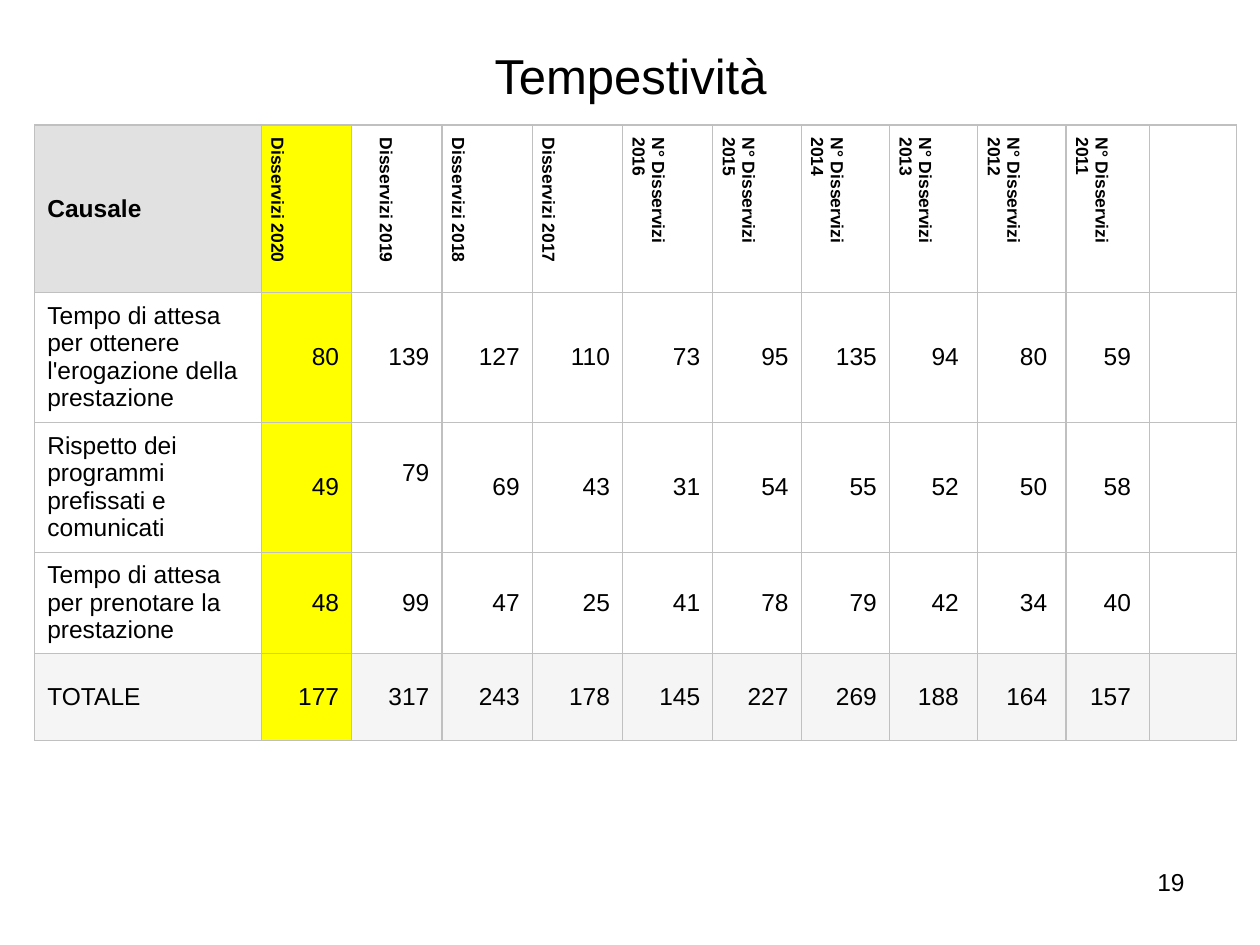
from lxml.etree import SubElement
from pptx import Presentation
from pptx.dml.color import RGBColor
from pptx.enum.text import MSO_ANCHOR, PP_ALIGN
from pptx.oxml.ns import qn
from pptx.util import Cm, Pt

HUES = {"ink": "000000", "line": "C0C0C0", "head": "E1E1E1",
        "mark": "FFFF00", "plain": "FFFFFF", "total": "F5F5F5"}
WIDTHS = [4.57] + [1.82] * 5 + [1.78] * 4 + [1.69, 1.74]
HEIGHTS = [3.37, 2.62, 2.62, 2.04, 1.75]
HEADS = ["Disservizi 2020", "Disservizi 2019", "Disservizi 2018",
         "Disservizi 2017", "N° Disservizi 2016"]
HEADS += [f"N° Disservizi\n{year}" for year in range(2015, 2010, -1)]
ROWS = [
    ("Tempo di attesa per ottenere l'erogazione della prestazione",
     [80, 139, 127, 110, 73, 95, 135, 94, 80, 59]),
    ("Rispetto dei programmi prefissati e comunicati",
     [49, 79, 69, 43, 31, 54, 55, 52, 50, 58]),
    ("Tempo di attesa per prenotare la prestazione",
     [48, 99, 47, 25, 41, 78, 79, 42, 34, 40]),
    ("TOTALE",
     [177, 317, 243, 178, 145, 227, 269, 188, 164, 157]),
]


class Deck:
    font = "Arial"

    def __init__(self):
        self.file = Presentation()
        self.file.slide_width, self.file.slide_height = Cm(25.4), Cm(19.05)
        self.slide = self.file.slides.add_slide(self.file.slide_layouts[5])

    def text(self, frame, words, size=14, bold=False, align=PP_ALIGN.LEFT):
        frame.word_wrap = True
        for i, line in enumerate(words.split("\n")):
            para = frame.add_paragraph() if i else frame.paragraphs[0]
            para.alignment = align
            run = para.add_run()
            run.text = line
            run.font.name, run.font.size, run.font.bold = self.font, Pt(size), bold
            run.font.color.rgb = RGBColor.from_string(HUES["ink"])

    def title(self, words, *box):
        shape = self.slide.shapes.title
        shape.left, shape.top, shape.width, shape.height = map(Cm, box)
        shape.text_frame.vertical_anchor = MSO_ANCHOR.MIDDLE
        self.text(shape.text_frame, words, 28, align=PP_ALIGN.CENTER)

    def label(self, words, *box):
        shape = self.slide.shapes.add_textbox(*map(Cm, box))
        self.text(shape.text_frame, words, align=PP_ALIGN.RIGHT)

    def table(self, left, top):
        frame = self.slide.shapes.add_table(
            len(HEIGHTS), len(WIDTHS), Cm(left), Cm(top),
            Cm(sum(WIDTHS)), Cm(sum(HEIGHTS)))
        grid = frame.table
        grid.first_row = grid.horz_banding = False
        for col, width in zip(grid.columns, WIDTHS):
            col.width = Cm(width)
        for row, height in zip(grid.rows, HEIGHTS):
            row.height = Cm(height)
        return grid

    def cell(self, cell, fill, words="", **style):
        props = cell._tc.get_or_add_tcPr()
        for side in ("a:lnL", "a:lnR", "a:lnT", "a:lnB"):
            line = SubElement(props, qn(side), w=str(Pt(0.75)))
            paint = SubElement(line, qn("a:solidFill"))
            SubElement(paint, qn("a:srgbClr"), val=HUES["line"])
        cell.fill.solid()
        cell.fill.fore_color.rgb = RGBColor.from_string(HUES[fill])
        cell.vertical_anchor = MSO_ANCHOR.MIDDLE
        if words:
            self.text(cell.text_frame, words, **style)

    def turn(self, cell):
        cell._tc.get_or_add_tcPr().set("vert", "vert")


def main():
    deck = Deck()
    deck.title("Tempestività", 1.7, 0.74, 22.02, 1.55)
    grid = deck.table(0.7, 2.52)

    deck.cell(grid.cell(0, 0), "head", "Causale", bold=True)
    for c, words in enumerate(HEADS, 1):
        head = grid.cell(0, c)
        deck.cell(head, "mark" if c == 1 else "plain", words, size=10, bold=True)
        deck.turn(head)
        if c == 1 or c > 7:
            head.vertical_anchor = MSO_ANCHOR.TOP
    grid.cell(0, 2).margin_bottom = Cm(0.49)
    for c in (3, 4):
        grid.cell(0, c).margin_top = Cm(0.49)

    for r, (name, values) in enumerate(ROWS, 1):
        tone = "total" if name == "TOTALE" else "plain"
        deck.cell(grid.cell(r, 0), tone, name)
        for c, value in enumerate(values, 1):
            box = grid.cell(r, c)
            deck.cell(box, "mark" if c == 1 else tone, str(value),
                      align=PP_ALIGN.RIGHT)
            if c > 7:
                box.margin_right = Cm(0.38)
    grid.cell(2, 2).margin_bottom = Cm(0.69)

    for r in range(len(HEIGHTS)):
        last = grid.cell(r, len(WIDTHS) - 1)
        deck.cell(last, "total" if r == len(ROWS) else "plain")

    deck.label("19", 18.21, 17.35, 5.92, 1.32)
    deck.file.save("out.pptx")


if __name__ == "__main__":
    main()
